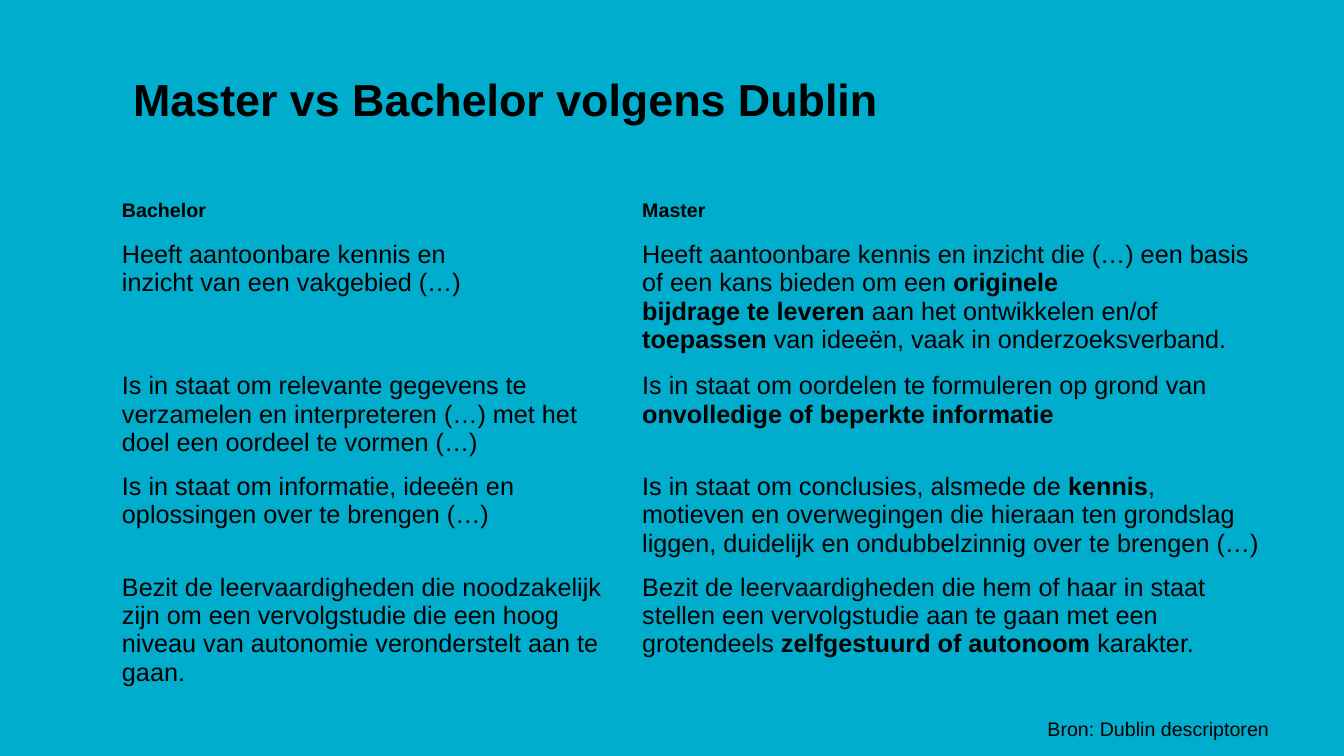
from lxml.etree import SubElement
from pptx import Presentation
from pptx.dml.color import RGBColor
from pptx.enum.text import MSO_ANCHOR as Anchor, MSO_AUTO_SIZE as AutoSize, PP_ALIGN as Align
from pptx.oxml.ns import qn
from pptx.util import Pt

PX = 9144  # 100 px to the inch
BLACK, CYAN = "000000", "00ADCD"

COLUMN_WIDTHS = [516, 633]
ROW_HEIGHT = 41
# Bold parts stand between ** marks; a line break starts a new paragraph.
ROWS = [
    ("**Bachelor**", "**Master**"),
    ("Heeft aantoonbare kennis en\ninzicht van een vakgebied (…)",
     "Heeft aantoonbare kennis en inzicht die (…) een basis of een kans bieden om een **originele**\n"
     "**bijdrage te leveren **aan het ontwikkelen en/of **toepassen** van ideeën, "
     "vaak in onderzoeksverband."),
    ("Is in staat om relevante gegevens te verzamelen en interpreteren (…) "
     "met het doel een oordeel te vormen (…)",
     "Is in staat om oordelen te formuleren op grond van **onvolledige of beperkte informatie**"),
    ("Is in staat om informatie, ideeën en oplossingen over te brengen (…)",
     "Is in staat om conclusies, alsmede de **kennis**, motieven en overwegingen die hieraan "
     "ten grondslag liggen, duidelijk en ondubbelzinnig over te brengen (…)"),
    ("Bezit de leervaardigheden die noodzakelijk zijn om een vervolgstudie die een hoog\n"
     "niveau van autonomie veronderstelt aan te gaan.",
     "Bezit de leervaardigheden die hem of haar in staat stellen een vervolgstudie aan te gaan "
     "met een grotendeels **zelfgestuurd of autonoom **karakter."),
]


def color(value):
    return RGBColor.from_string(value)


def box_emu(box):
    return [length * PX for length in box]


def place(shape, box):
    shape.left, shape.top, shape.width, shape.height = box_emu(box)


def write(text_frame, text, size):
    for index, line in enumerate(text.split("\n")):
        paragraph = text_frame.paragraphs[0] if index == 0 else text_frame.add_paragraph()
        paragraph.alignment = Align.LEFT
        for part_index, part in enumerate(line.split("**")):
            if not part:
                continue
            run = paragraph.add_run()
            run.text = part
            run.font.color.rgb = color(BLACK)
            font_format = {"name": "Arial", "size": Pt(size), "bold": part_index % 2 == 1}
            for name, value in font_format.items():
                setattr(run.font, name, value)


def set_borders(cell, widths):
    properties = cell._tc.get_or_add_tcPr()
    for index, (side, width) in enumerate(widths.items()):
        line = SubElement(properties, qn(f"a:ln{side}"), w=str(Pt(width)))
        fill = SubElement(line, qn("a:solidFill"))
        SubElement(fill, qn("a:srgbClr"), val=CYAN)
        properties.insert(index, line)


def add_title(slide, box):
    title = slide.shapes.title
    place(title, box)
    frame_format = {"vertical_anchor": Anchor.BOTTOM, "word_wrap": True,
                    "auto_size": AutoSize.SHAPE_TO_FIT_TEXT}
    for name, value in frame_format.items():
        setattr(title.text_frame, name, value)
    write(title.text_frame, "**Master vs Bachelor volgens Dublin**", 32)


def add_comparison(slide, box):
    frame = slide.shapes.add_table(len(ROWS), len(COLUMN_WIDTHS), *box_emu(box))
    table = frame.table
    table.first_row = table.horz_banding = False
    for column, width in zip(table.columns, COLUMN_WIDTHS):
        column.width = width * PX
    for row_index, texts in enumerate(ROWS):
        table.rows[row_index].height = ROW_HEIGHT * PX
        for column_index, text in enumerate(texts):
            cell = table.cell(row_index, column_index)
            cell.fill.background()
            # A thick rule separates the header from the body
            set_borders(cell, {"L": 1, "R": 1,
                               "T": 3 if row_index == 1 else 1,
                               "B": 3 if row_index == 0 else 1})
            write(cell.text_frame, text, 14 if row_index == 0 else 18)


def add_source_note(slide, box):
    note = slide.shapes.add_textbox(*box_emu(box))
    note.text_frame.word_wrap = False
    note.text_frame.auto_size = AutoSize.SHAPE_TO_FIT_TEXT
    write(note.text_frame, "Bron: Dublin descriptoren", 14)


def main():
    presentation = Presentation()
    presentation.slide_width, presentation.slide_height = 1333 * PX, 750 * PX
    slide = presentation.slides.add_slide(presentation.slide_layouts[5])
    slide.background.fill.solid()
    slide.background.fill.fore_color.rgb = color(CYAN)

    add_title(slide, (122, 67, 900, 63))
    add_comparison(slide, (111, 193, sum(COLUMN_WIDTHS), ROW_HEIGHT * len(ROWS)))
    add_source_note(slide, (1029, 706, 241, 34))
    presentation.save("out.pptx")


if __name__ == "__main__":
    main()
